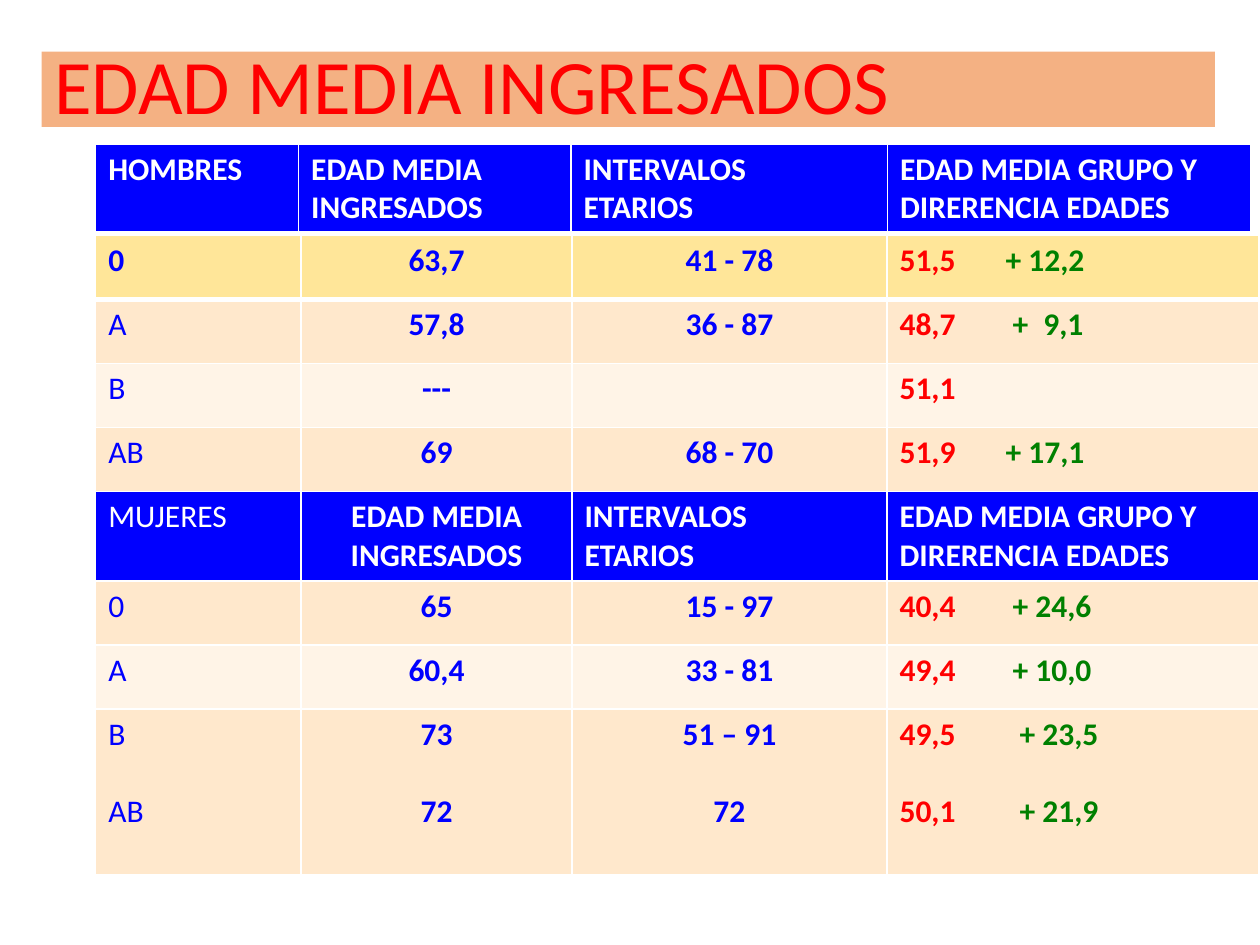
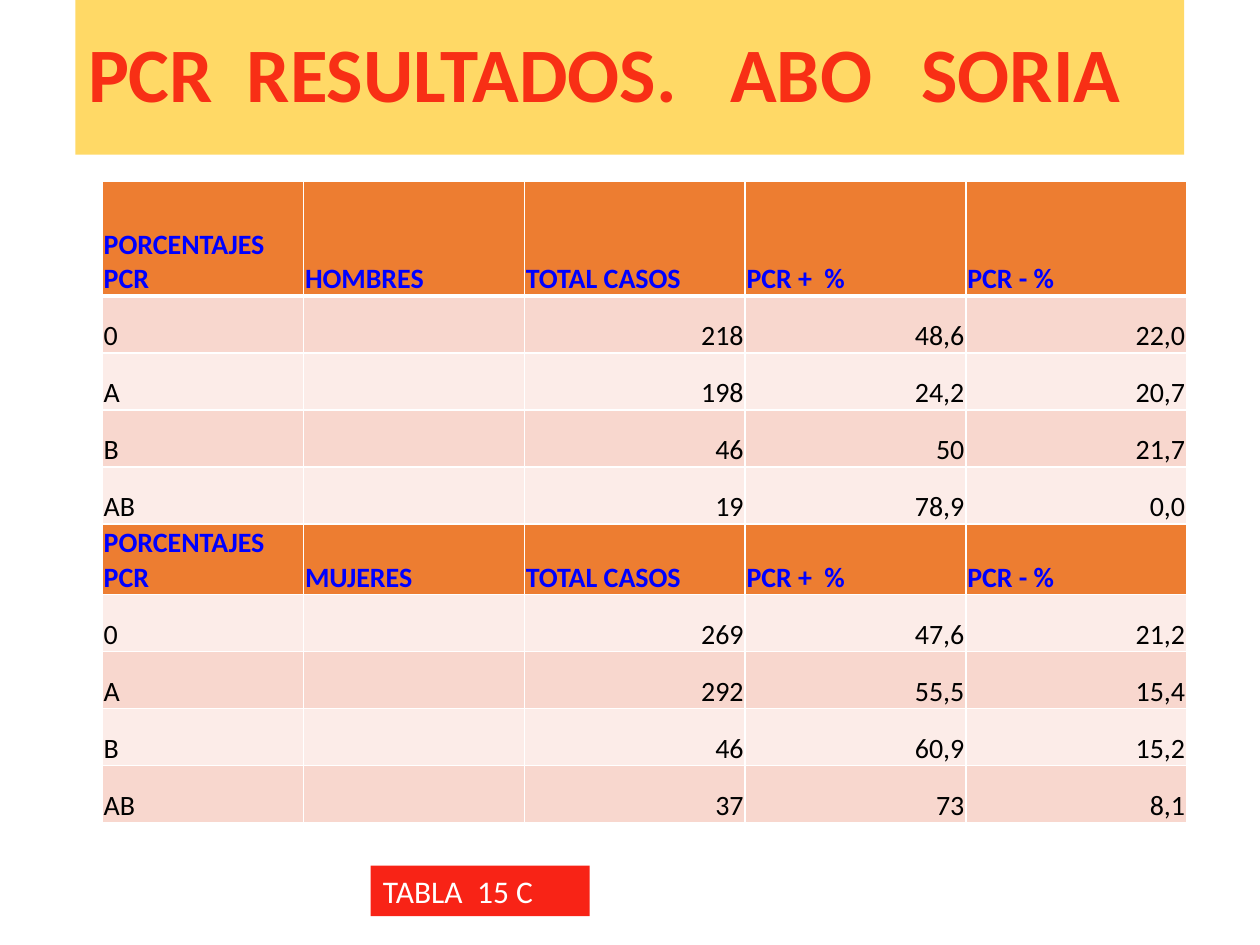
from dataclasses import dataclass, replace

from lxml import etree
from pptx import Presentation
from pptx.dml.color import RGBColor
from pptx.enum.shapes import MSO_SHAPE
from pptx.enum.text import MSO_ANCHOR, MSO_AUTO_SIZE, PP_ALIGN
from pptx.oxml.ns import qn
from pptx.slide import Slide
from pptx.table import _Cell
from pptx.text.text import TextFrame
from pptx.util import Cm, Pt

LEFT, CENTER, RIGHT = PP_ALIGN.LEFT, PP_ALIGN.CENTER, PP_ALIGN.RIGHT
TOP, MIDDLE, BOTTOM = MSO_ANCHOR.TOP, MSO_ANCHOR.MIDDLE, MSO_ANCHOR.BOTTOM
NO_AUTOFIT = MSO_AUTO_SIZE.NONE
RECTANGLE = MSO_SHAPE.RECTANGLE

FONT = "Calibri"
WHITE = RGBColor(0xFF, 0xFF, 0xFF)
BLACK = RGBColor(0x00, 0x00, 0x00)
BLUE = RGBColor(0x00, 0x00, 0xFF)
RED = RGBColor(0xFF, 0x00, 0x00)
GREEN = RGBColor(0x00, 0x80, 0x00)
SALMON = RGBColor(0xF4, 0xB1, 0x83)
YELLOW = RGBColor(0xFF, 0xD9, 0x66)
VERMILION = RGBColor(0xF8, 0x2F, 0x15)
CAPTION_RED = RGBColor(0xF8, 0x23, 0x16)
PALE_YELLOW = RGBColor(0xFF, 0xE6, 0x99)
PEACH = RGBColor(0xFF, 0xE8, 0xCC)
CREAM = RGBColor(0xFF, 0xF4, 0xE7)
ORANGE = RGBColor(0xED, 0x7D, 0x31)
ROSE = RGBColor(0xF8, 0xD7, 0xCE)
PALE_ROSE = RGBColor(0xFC, 0xEC, 0xE8)


@dataclass(frozen=True)
class Style:
    size: int
    color: RGBColor
    bold: bool = False
    align: PP_ALIGN = LEFT
    after_tab: RGBColor | None = None


@dataclass(frozen=True)
class Box:
    left: float
    top: float
    width: float
    height: float


@dataclass(frozen=True)
class CellText:
    text: str
    style: Style
    tabs: tuple[float, ...] = ()
    gap: int = 0


@dataclass(frozen=True)
class Row:
    height: float
    fill: RGBColor
    cells: list[CellText]


@dataclass(frozen=True)
class TableLayout:
    left: float
    top: float
    widths: tuple[float, ...]
    anchor: MSO_ANCHOR = TOP
    tight: bool = False
    thick_first_row: bool = True


TITLE = Style(44, RED)
BOLD_TITLE = Style(44, VERMILION, bold=True)
CAPTION = Style(18, WHITE)

AGE_HEADER = Style(18, WHITE, bold=True)
AGE_LABEL = Style(18, BLUE)
AGE_VALUE = Style(18, BLUE, bold=True, align=CENTER)
AGE_GROUP = Style(18, RED, bold=True, after_tab=GREEN)
AGE_HEADINGS = ("EDAD MEDIA INGRESADOS", "INTERVALOS\nETARIOS",
                "EDAD MEDIA GRUPO Y\nDIRERENCIA EDADES")
AGE_HEADER_HEIGHT = 1.8
AGE_ROW_HEIGHT = 1.29

PCR_HEADER = Style(16, BLUE, bold=True)
PCR_LABEL = Style(16, BLACK)
PCR_VALUE = Style(16, BLACK, align=RIGHT)
PCR_ROW_HEIGHT = 1.15
PCR_MEN = (("0", "218", "48,6", "22,0"), ("A", "198", "24,2", "20,7"),
           ("B", "46", "50", "21,7"), ("AB", "19", "78,9", "0,0"))
PCR_WOMEN = (("0", "269", "47,6", "21,2"), ("A", "292", "55,5", "15,4"),
             ("B", "46", "60,9", "15,2"), ("AB", "37", "73", "8,1"))


def write_text(text_frame: TextFrame, content: CellText) -> None:
    style = content.style
    text_frame.text = content.text
    for index, paragraph in enumerate(text_frame.paragraphs):
        if content.tabs:
            properties = paragraph._p.get_or_add_pPr()
            tab_list = etree.SubElement(properties, qn("a:tabLst"))
            for position in content.tabs:
                etree.SubElement(tab_list, qn("a:tab"), pos=str(Cm(position)), algn="l")
        paragraph.alignment = style.align
        if index and content.gap:
            paragraph.space_before = Pt(content.gap)
        head, tab, tail = paragraph.text.partition("\t")
        if style.after_tab and tab:
            paragraph.text = head
            paragraph.add_run().text = tab + tail
        for run_index, run in enumerate(paragraph.runs):
            run.font.name = FONT
            run.font.size = Pt(style.size)
            run.font.bold = style.bold
            run.font.color.rgb = style.after_tab if run_index else style.color


def add_title(slide: Slide, box: Box, fill: RGBColor, content: CellText) -> None:
    title = slide.shapes.title
    title.left, title.top = Cm(box.left), Cm(box.top)
    title.width, title.height = Cm(box.width), Cm(box.height)
    title.fill.solid()
    title.fill.fore_color.rgb = fill
    text_frame = title.text_frame
    write_text(text_frame, content)
    text_frame.auto_size = NO_AUTOFIT
    text_frame.word_wrap = True
    text_frame.vertical_anchor = MIDDLE
    text_frame.paragraphs[0].line_spacing = 0.9


def add_caption(slide: Slide, box: Box, content: CellText) -> None:
    caption = slide.shapes.add_shape(
        RECTANGLE, Cm(box.left), Cm(box.top), Cm(box.width), Cm(box.height))
    caption.shadow.inherit = False
    caption.fill.solid()
    caption.fill.fore_color.rgb = CAPTION_RED
    caption.line.fill.background()
    caption.text_frame.vertical_anchor = TOP
    write_text(caption.text_frame, content)


def set_borders(cell: _Cell, top: int, bottom: int) -> None:
    properties = cell._tc.get_or_add_tcPr()
    for side, width in (("L", 1), ("R", 1), ("T", top), ("B", bottom)):
        line = etree.SubElement(properties, qn(f"a:ln{side}"), w=str(Pt(width)))
        fill = etree.SubElement(line, qn("a:solidFill"))
        etree.SubElement(fill, qn("a:srgbClr"), val=str(WHITE))


def add_table(slide: Slide, layout: TableLayout, rows: list[Row]) -> None:
    table = slide.shapes.add_table(
        len(rows), len(layout.widths), Cm(layout.left), Cm(layout.top),
        Cm(sum(layout.widths)), Cm(sum(row.height for row in rows))).table
    table.first_row = table.horz_banding = False
    for column, width in zip(table.columns, layout.widths):
        column.width = Cm(width)
    for row_index, row in enumerate(rows):
        table.rows[row_index].height = Cm(row.height)
        for column_index, content in enumerate(row.cells):
            cell = table.cell(row_index, column_index)
            set_borders(cell, 3 if row_index == 1 else 1, 3 if row_index == 0 else 1)
            cell.fill.solid()
            cell.fill.fore_color.rgb = row.fill
            cell.vertical_anchor = layout.anchor
            if layout.tight:
                cell.margin_left = cell.margin_right = cell.margin_top = Cm(0.03)
                cell.margin_bottom = Cm(0)
            if content.text:
                write_text(cell.text_frame, content)


def age_header(label: str, label_bold: bool, mean_align: PP_ALIGN) -> Row:
    mean, interval, group = AGE_HEADINGS
    return Row(AGE_HEADER_HEIGHT, BLUE, [
        CellText(label, replace(AGE_HEADER, bold=label_bold)),
        CellText(mean, replace(AGE_HEADER, align=mean_align)),
        CellText(interval, AGE_HEADER),
        CellText(group, AGE_HEADER)])


def age_row(fill: RGBColor, texts: tuple[str, str, str, str], *tabs: float,
            label_bold: bool = False, height: float = AGE_ROW_HEIGHT) -> Row:
    label, mean, interval, group = texts
    return Row(height, fill, [
        CellText(label, replace(AGE_LABEL, bold=label_bold), gap=22),
        CellText(mean, AGE_VALUE, gap=22),
        CellText(interval, AGE_VALUE, gap=22),
        CellText(group, AGE_GROUP, tabs, gap=22)])


def pcr_header(sex: str, height: float) -> Row:
    texts = ("PORCENTAJES PCR", sex, "TOTAL CASOS", "PCR +\t%", "PCR - %")
    return Row(height, ORANGE, [
        CellText(text, PCR_HEADER, (1.57,) if "\t" in text else ()) for text in texts])


def pcr_rows(records: tuple[tuple[str, ...], ...], fills: tuple[RGBColor, RGBColor]) -> list[Row]:
    return [
        Row(PCR_ROW_HEIGHT, fills[index % 2],
            [CellText(label, PCR_LABEL), CellText("", PCR_VALUE)]
            + [CellText(value, PCR_VALUE) for value in values])
        for index, (label, *values) in enumerate(records)]


def build_age_slide(slide: Slide) -> None:
    add_title(slide, Box(0.84, 1.04, 23.65, 1.52), SALMON,
              CellText("EDAD MEDIA INGRESADOS", TITLE))
    add_table(slide, TableLayout(1.93, 2.9, (4.09, 5.49, 6.38, 7.32)),
              [age_header("HOMBRES", True, LEFT)])
    add_table(slide, TableLayout(1.93, 4.75, (4.14, 5.46, 6.35, 7.49)), [
        age_row(PALE_YELLOW, ("0", "63,7", "41 - 78", "51,5\t+ 12,2"), 2.14, label_bold=True),
        age_row(PEACH, ("A", "57,8", "36 - 87", "48,7\t+\t9,1"), 2.28, 2.9),
        age_row(CREAM, ("B", "---", "", "51,1")),
        age_row(PEACH, ("AB", "69", "68 - 70", "51,9\t+ 17,1"), 2.14),
        age_header("MUJERES", False, CENTER),
        age_row(PEACH, ("0", "65", "15 - 97", "40,4\t+ 24,6"), 2.28),
        age_row(CREAM, ("A", "60,4", "33 - 81", "49,4\t+ 10,0"), 2.28),
        age_row(PEACH, ("B\nAB", "73\n72", "51 – 91\n72", "49,5\t+ 23,5\n50,1\t+ 21,9"),
                2.42, height=3.33)])


def build_pcr_slide(slide: Slide) -> None:
    add_title(slide, Box(1.52, 0, 22.35, 3.12), YELLOW,
              CellText("PCR\tRESULTADOS.\tABO\tSORIA", BOLD_TITLE, (3.2, 12.95, 16.8)))
    add_table(slide, TableLayout(2.06, 3.66, (4.06,) + (4.45,) * 4, BOTTOM, tight=True), [
        pcr_header("HOMBRES", 2.31), *pcr_rows(PCR_MEN, (ROSE, PALE_ROSE)),
        pcr_header("MUJERES", 1.42), *pcr_rows(PCR_WOMEN, (PALE_ROSE, ROSE))])
    add_caption(slide, Box(7.47, 17.45, 4.42, 1.02), CellText("TABLA\t15 C", CAPTION, (1.9,)))


def main() -> None:
    presentation = Presentation()
    presentation.slide_width, presentation.slide_height = Cm(25.4), Cm(19.05)
    title_only = presentation.slide_layouts[5]
    for build in (build_age_slide, build_pcr_slide):
        build(presentation.slides.add_slide(title_only))
    presentation.save("out.pptx")


if __name__ == "__main__":
    main()
